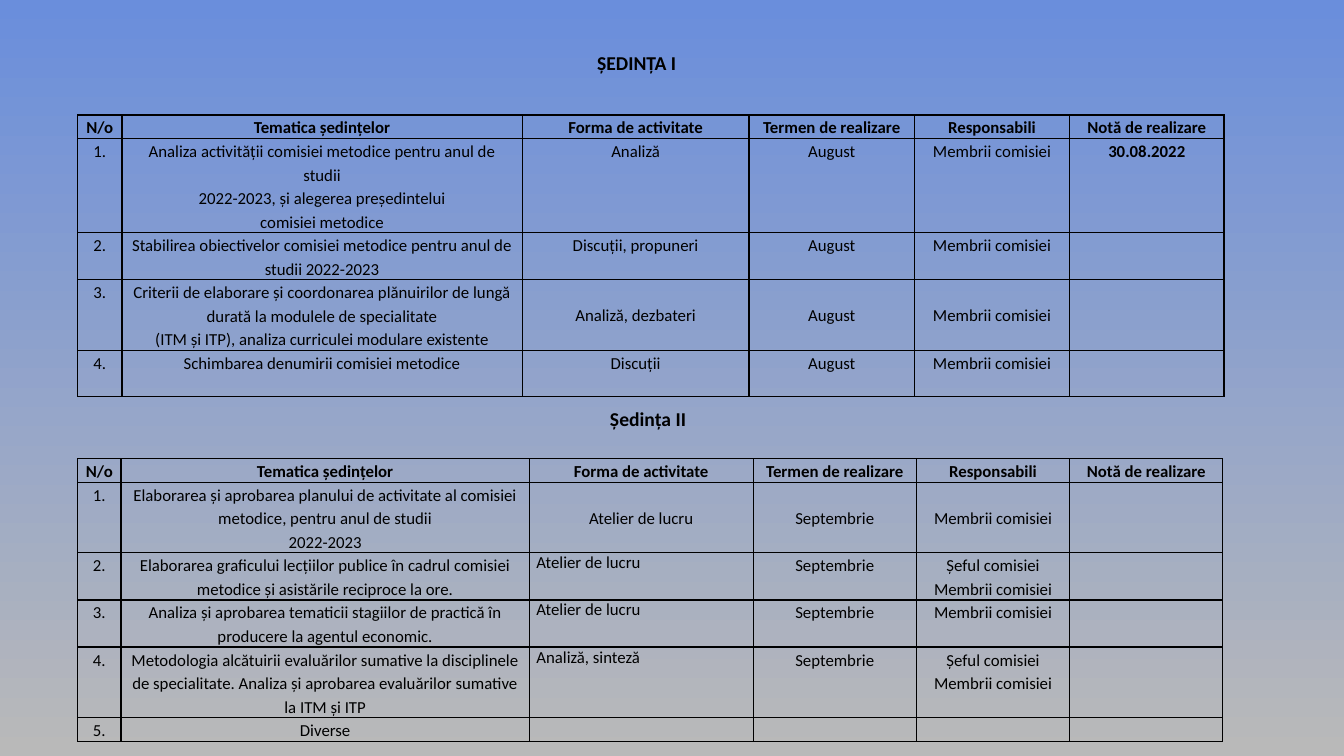
from lxml.etree import SubElement
from pptx import Presentation
from pptx.dml.color import RGBColor
from pptx.enum.text import MSO_AUTO_SIZE as AutoSize, PP_ALIGN as Align
from pptx.oxml import parse_xml
from pptx.oxml.ns import nsdecls, qn
from pptx.util import Inches, Pt

FONT = "Calibri"
INK = "000000"
LINE = 0.23
SPACING = 1.15
HEADINGS = ["N/o", "Tematica ședințelor", "Forma de activitate",
            "Termen de realizare", "Responsabili", "Notă de realizare"]
MEMBERS = "Membrii comisiei"
LEADERS = "Șeful comisiei\nMembrii comisiei"

FIRST_MEETING = [
    HEADINGS,
    ["1.", "Analiza activității comisiei metodice pentru anul de studii\n"
     "2022-2023, și alegerea președintelui\ncomisiei metodice",
     "Analiză", "August", MEMBERS, "30.08.2022"],
    ["2.", "Stabilirea obiectivelor comisiei metodice pentru anul de studii 2022-2023",
     "Discuții, propuneri", "August", MEMBERS, ""],
    ["3.", "Criterii de elaborare și coordonarea plănuirilor de lungă durată "
     "la modulele de specialitate\n(ITM și ITP), analiza curriculei modulare existente",
     "Analiză, dezbateri", "August", MEMBERS, ""],
    ["4.", "Schimbarea denumirii comisiei metodice", "Discuții", "August", MEMBERS, ""],
]
SECOND_MEETING = [
    HEADINGS,
    ["1.", "Elaborarea și aprobarea planului de activitate al comisiei metodice, "
     "pentru anul de studii\n2022-2023", "Atelier de lucru", "Septembrie", MEMBERS, ""],
    ["2.", "Elaborarea graficului lecțiilor publice în cadrul comisiei metodice "
     "și asistările reciproce la ore.", "Atelier de lucru", "Septembrie", LEADERS, ""],
    ["3.", "Analiza și aprobarea tematicii stagiilor de practică în producere "
     "la agentul economic.", "Atelier de lucru", "Septembrie", MEMBERS, ""],
    ["4.", "Metodologia alcătuirii evaluărilor sumative la disciplinele de specialitate. "
     "Analiza și aprobarea evaluărilor sumative la ITM și ITP",
     "Analiză, sinteză", "Septembrie", LEADERS, ""],
    ["5.", "Diverse", "", "", "", ""],
]


def color(value):
    return RGBColor.from_string(value)


def apply(target, formats):
    for name, value in formats.items():
        setattr(target, name, value)


def write(para, text, size, bold):
    span = para.add_run()
    span.text = text
    apply(span.font, {"name": FONT, "size": Pt(size), "bold": bold})
    span.font.color.rgb = color(INK)


def paint_background(page):
    fill = page.background.fill
    fill.gradient()
    fill.gradient_angle = 270
    for stop, (position, value) in zip(fill.gradient_stops, [(0, "6A8EDC"), (1, "B9B9B9")]):
        stop.position = position
        stop.color.rgb = color(value)


def add_heading(page, box, text, frame_formats, para_formats):
    frame = page.shapes.add_textbox(*map(Inches, box)).text_frame
    apply(frame, frame_formats)
    para = frame.paragraphs[0]
    apply(para, para_formats)
    write(para, text, 14, True)


def style_cell(cell, top):
    apply(cell, {"margin_left": Inches(0.07), "margin_right": Inches(0.07),
                 "margin_top": Inches(top), "margin_bottom": 0})
    properties = cell._tc.get_or_add_tcPr()
    for side in ("lnL", "lnR", "lnT", "lnB"):
        properties.append(parse_xml(
            f'<a:{side} {nsdecls("a")} w="12700"><a:solidFill>'
            f'<a:srgbClr val="{INK}"/></a:solidFill></a:{side}>'))
    cell.fill.background()


def fill_cell(cell, text, bold, left):
    frame = cell.text_frame
    for index, line in enumerate(text.split("\n")):
        para = frame.add_paragraph() if index else frame.paragraphs[0]
        if not left:
            apply(para, {"alignment": Align.CENTER, "line_spacing": SPACING})
        if line:
            write(para, line, 12, bold)
        else:
            SubElement(para._p, qn("a:endParaRPr"), sz="1200")


def add_meeting_table(page, box, rows, widths, line_counts, lowered_row, left_rows=()):
    table = page.shapes.add_table(len(rows), len(widths), *map(Inches, box)).table
    apply(table, {"first_row": False, "horz_banding": False})
    for column, width in zip(table.columns, widths):
        column.width = Inches(width)
    for r, (texts, count) in enumerate(zip(rows, line_counts)):
        table.rows[r].height = Inches(count * LINE)
        for c, text in enumerate(texts):
            lowered = r == lowered_row and c in (2, 3, 4)
            cell = table.cell(r, c)
            style_cell(cell, LINE if lowered else 0)
            fill_cell(cell, text, r == 0 or c == 5, c == 2 and r in left_rows)


def build_schedule(page):
    paint_background(page)
    add_meeting_table(page, (0.77, 1.14, 11.36, 2.76), FIRST_MEETING,
                      [0.44, 3.97, 2.25, 1.64, 1.54, 1.53], [1, 4, 2, 3, 2], 3)
    add_meeting_table(page, (0.77, 4.55, 11.36, 2.76), SECOND_MEETING,
                      [0.43, 4.05, 2.22, 1.62, 1.52, 1.52], [1, 3, 2, 2, 3, 1], 1, (2, 3, 4))
    add_heading(page, (5.08, 3.99, 2.49, 0.64), "Ședința II",
                {"word_wrap": True, "margin_left": Inches(0.97)}, {})
    add_heading(page, (5.82, 0.42, 0.99, 0.36), "ȘEDINȚA I",
                {"word_wrap": False, "auto_size": AutoSize.SHAPE_TO_FIT_TEXT},
                {"alignment": Align.CENTER, "line_spacing": SPACING, "space_after": Pt(10)})


def main():
    deck = Presentation()
    apply(deck, {"slide_width": Inches(13.33), "slide_height": Inches(7.5)})
    build_schedule(deck.slides.add_slide(deck.slide_layouts[6]))
    deck.save("out.pptx")


if __name__ == "__main__":
    main()
